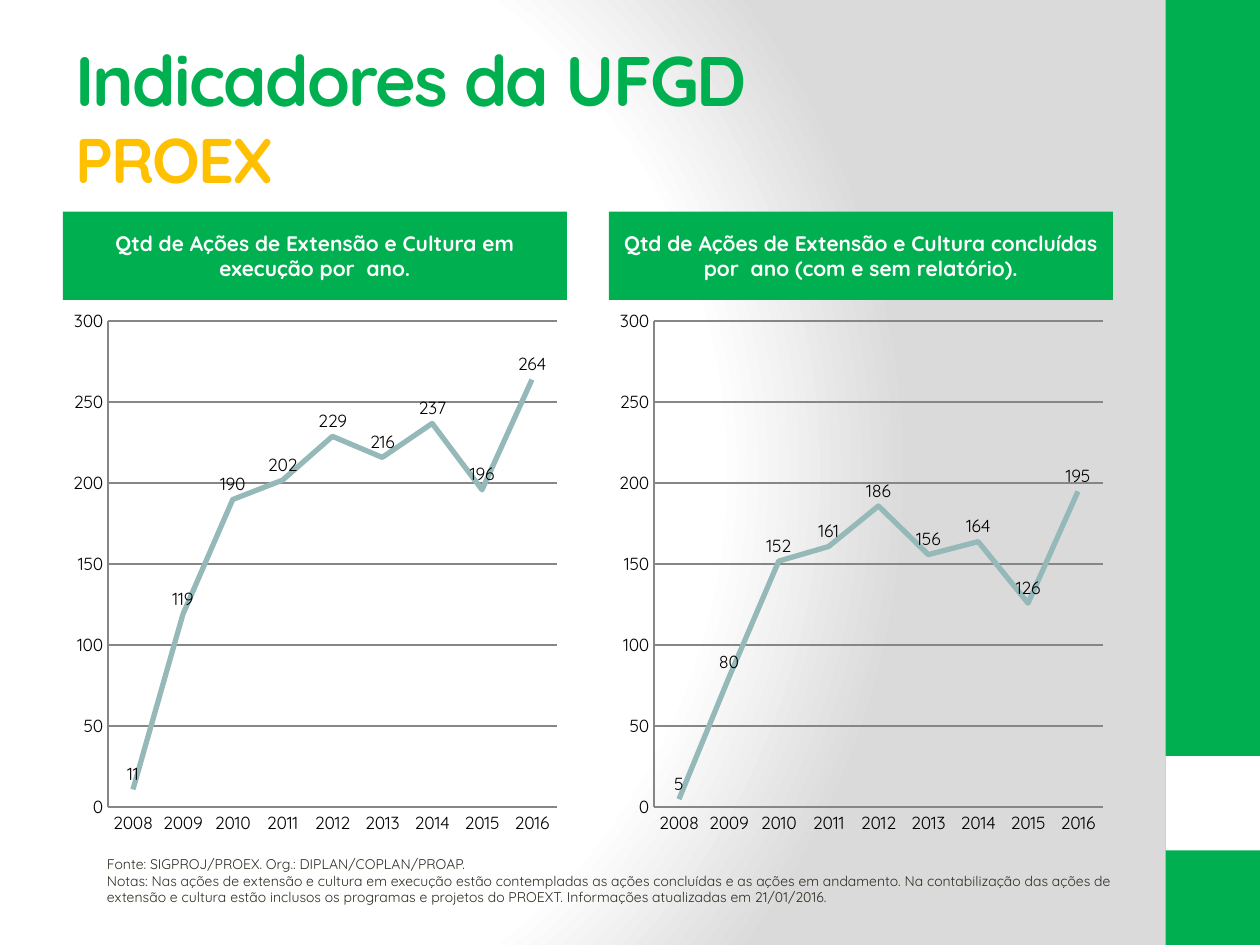
from dataclasses import dataclass

from lxml.etree import SubElement
from pptx import Presentation
from pptx.chart.data import CategoryChartData
from pptx.dml.color import RGBColor as Color
from pptx.enum.chart import XL_CHART_TYPE as ChartType
from pptx.enum.chart import XL_LABEL_POSITION as LabelPosition
from pptx.enum.chart import XL_TICK_MARK as TickMark
from pptx.enum.shapes import MSO_SHAPE as Shape
from pptx.enum.text import MSO_ANCHOR as Anchor
from pptx.enum.text import PP_ALIGN as Align
from pptx.oxml import parse_xml
from pptx.oxml.ns import nsdecls, qn
from pptx.slide import Slide
from pptx.util import Pt


@dataclass(frozen=True)
class Theme:
    font: str = "Quicksand"
    green: str = "00B050"
    yellow: str = "FFC000"
    white: str = "FFFFFF"
    grey: str = "DADADA"
    black: str = "000000"
    note: str = "2F2B20"
    grid: str = "868686"
    line: str = "95B8B8"
    title_size: int = 40
    subtitle_size: int = 36
    banner_size: int = 12
    chart_size: int = 10
    note_size: int = 8


@dataclass(frozen=True)
class Frame:
    left: float
    top: float
    width: float
    height: float

    def lengths(self) -> tuple:
        return Pt(self.left), Pt(self.top), Pt(self.width), Pt(self.height)


@dataclass(frozen=True)
class Panel:
    left: float
    heading: str
    values: tuple


THEME = Theme()
YEARS = [str(year) for year in range(2008, 2017)]
PANEL_WIDTH = 288
BANNER_TOP, BANNER_HEIGHT = 121, 50.4
CHART_HEIGHT = 311
PANELS = (
    Panel(36, "Qtd de Ações de Extensão e Cultura em execução por  ano.",
          (11, 119, 190, 202, 229, 216, 237, 196, 264)),
    Panel(348, "Qtd de Ações de Extensão e Cultura concluídas por  ano (com e sem relatório).",
          (5, 80, 152, 161, 186, 156, 164, 126, 195)),
)
SIDE_BARS = (
    (Frame(666, 0, 54, 540), THEME.green),
    (Frame(666, 432, 54, 54), THEME.white),
)
NOTES = (
    "Fonte: SIGPROJ/PROEX. Org.: DIPLAN/COPLAN/PROAP.\n"
    "Notas: Nas ações de extensão e cultura em execução estão contempladas as ações "
    "concluídas e as ações em andamento. Na contabilização das ações de extensão e "
    "cultura estão inclusos os programas e projetos do PROEXT. Informações atualizadas "
    "em 21/01/2016."
)


def style_font(font, size: float, color: str, bold: bool = False) -> None:
    font.name = THEME.font
    font.size = Pt(size)
    font.bold = bold
    font.color.rgb = Color.from_string(color)


def set_background(slide: Slide) -> None:
    stops = ((0, THEME.white), (75, THEME.white), (100, THEME.grey))
    stop_xml = "".join(
        f'<a:gs pos="{position * 1000}"><a:srgbClr val="{color}"/></a:gs>'
        for position, color in stops
    )
    background = parse_xml(
        f'<p:bg {nsdecls("p", "a")}><p:bgPr><a:gradFill rotWithShape="1">'
        f'<a:gsLst>{stop_xml}</a:gsLst><a:path path="circle">'
        '<a:fillToRect l="20000" t="50000" r="100000" b="50000"/></a:path>'
        '</a:gradFill><a:effectLst/></p:bgPr></p:bg>'
    )
    slide.element.cSld.insert(0, background)


def add_block(slide: Slide, frame: Frame, color: str):
    block = slide.shapes.add_shape(Shape.RECTANGLE, *frame.lengths())
    block.shadow.inherit = False
    block.fill.solid()
    block.fill.fore_color.rgb = Color.from_string(color)
    block.line.fill.background()
    return block


def add_text_box(slide: Slide, frame: Frame, text: str):
    box = slide.shapes.add_textbox(*frame.lengths())
    box.text_frame.word_wrap = True
    box.text_frame.text = text
    return box.text_frame


def add_title(slide: Slide) -> None:
    text = add_text_box(slide, Frame(36, 21.6, 600, 90), "Indicadores da UFGD\vPROEX")
    text.vertical_anchor = Anchor.MIDDLE
    styles = ((THEME.title_size, THEME.green), (THEME.subtitle_size, THEME.yellow))
    for span, (size, color) in zip(text.paragraphs[0].runs, styles):
        style_font(span.font, size, color, bold=True)
        span.font._element.set("spc", "-100")


def add_banner(slide: Slide, panel: Panel) -> None:
    frame = Frame(panel.left, BANNER_TOP, PANEL_WIDTH, BANNER_HEIGHT)
    text = add_block(slide, frame, THEME.green).text_frame
    text.word_wrap = True
    text.vertical_anchor = Anchor.MIDDLE
    text.text = panel.heading
    para = text.paragraphs[0]
    para.alignment = Align.CENTER
    style_font(para.runs[0].font, THEME.banner_size, THEME.white, bold=True)


def style_line(line, color: str, width: float) -> None:
    line.color.rgb = Color.from_string(color)
    line.width = Pt(width)


def add_line_chart(slide: Slide, panel: Panel) -> None:
    data = CategoryChartData()
    data.categories = YEARS
    data.add_series("Series 1", panel.values)
    frame = Frame(panel.left, BANNER_TOP + BANNER_HEIGHT, PANEL_WIDTH, CHART_HEIGHT)
    chart = slide.shapes.add_chart(ChartType.LINE, *frame.lengths(), data).chart
    chart.has_title = False
    chart.has_legend = False
    style_font(chart.font, THEME.chart_size, THEME.black)

    for axis in (chart.category_axis, chart.value_axis):
        axis.major_tick_mark = TickMark.NONE
        axis.minor_tick_mark = TickMark.NONE
        style_font(axis.tick_labels.font, THEME.chart_size, THEME.black)
        style_line(axis.format.line, THEME.grid, 1)
    scale = chart.value_axis
    scale.minimum_scale, scale.maximum_scale, scale.major_unit = 0, 300, 50
    scale.has_major_gridlines = True
    style_line(scale.major_gridlines.format.line, THEME.grid, 1)

    plot = chart.plots[0]
    plot.vary_by_categories = False
    series = plot.series[0]
    series.smooth = False
    style_line(series.format.line, THEME.line, 3)
    labels = series.data_labels
    labels.show_value = True
    labels.position = LabelPosition.ABOVE
    style_font(labels.font, THEME.chart_size, THEME.black)


def add_notes(slide: Slide) -> None:
    text = add_text_box(slide, Frame(54, 485.3, 594.7, 36), NOTES)
    for para in text.paragraphs:
        style_font(para.runs[0].font, THEME.note_size, THEME.note)


def main() -> None:
    deck = Presentation()
    deck.slide_width, deck.slide_height = Pt(720), Pt(540)
    page = deck.slides.add_slide(deck.slide_layouts[6])
    set_background(page)
    for frame, color in SIDE_BARS:
        add_block(page, frame, color)
    add_title(page)
    for panel in PANELS:
        add_banner(page, panel)
        add_line_chart(page, panel)
    add_notes(page)
    deck.save("out.pptx")


if __name__ == "__main__":
    main()
